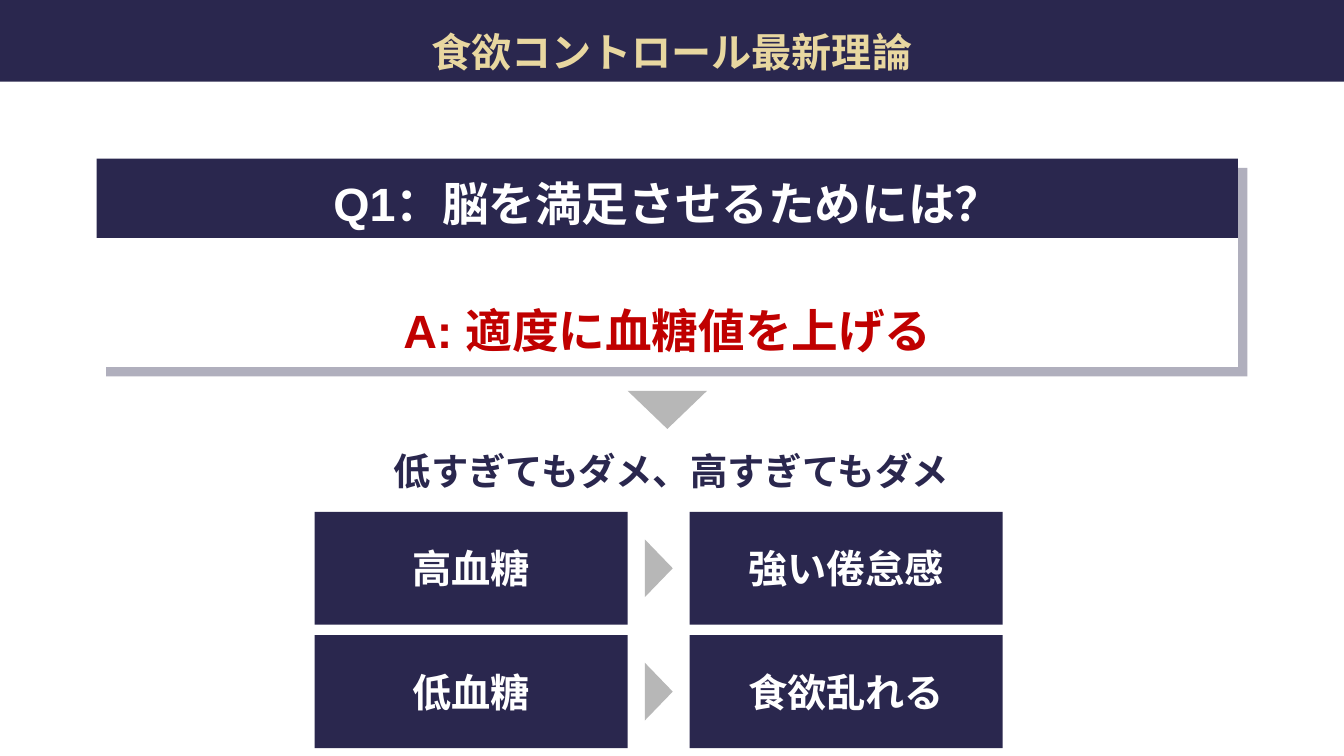
from lxml.etree import SubElement
from pptx import Presentation
from pptx.dml.color import RGBColor
from pptx.enum.shapes import MSO_SHAPE as Shape
from pptx.enum.text import MSO_ANCHOR as Anchor, PP_ALIGN as Align
from pptx.oxml.ns import qn
from pptx.util import Pt

COLORS = {
    "navy": "2A274E",
    "gold": "E8D7A0",
    "white": "FFFFFF",
    "red": "C00000",
    "gray": "B7B7B7",
}
FONT = "Arial"
INSET = 7.2


def add_block(slide, box, color, kind=Shape.RECTANGLE, rotation=0, alpha=None):
    shape = slide.shapes.add_shape(kind, *map(Pt, box))
    shape.shadow.inherit = False
    shape.fill.solid()
    shape.fill.fore_color.rgb = RGBColor.from_string(COLORS[color])
    shape.line.fill.background()
    shape.rotation = rotation
    if alpha is not None:
        fill_color = shape.fill._xPr.find(qn("a:solidFill"))[0]
        SubElement(fill_color, qn("a:alpha"), val=str(alpha * 1000))
    return shape


def add_textbox(slide, box):
    return slide.shapes.add_textbox(*map(Pt, box))


def set_text(shape, text, size, color, spacing=None, anchor=Anchor.MIDDLE):
    frame = shape.text_frame
    frame.text = text
    frame.word_wrap = True
    frame.vertical_anchor = anchor
    frame.margin_left = frame.margin_right = Pt(INSET)
    frame.margin_top = frame.margin_bottom = Pt(INSET)
    paragraph = frame.paragraphs[0]
    paragraph.alignment = Align.CENTER
    paragraph.line_spacing = spacing
    font = paragraph.runs[0].font
    font.name, font.size, font.bold = FONT, Pt(size), True
    font.color.rgb = RGBColor.from_string(COLORS[color])


def add_arrow(slide, center_x, center_y, base, height, rotation):
    box = (center_x - base / 2, center_y - height / 2, base, height)
    add_block(slide, box, "gray", Shape.ISOSCELES_TRIANGLE, rotation)


def add_title_bar(slide, box):
    bar = add_block(slide, box, "navy")
    set_text(bar, "食欲コントロール最新理論", 21.5, "gold", 1.3, Anchor.TOP)


def add_question_card(slide, box, question, answer):
    left, top, width, height = box
    offset, header_height, answer_top = 5, 42.5, 54.5
    # Translucent offset panel behind the card
    add_block(slide, (left + offset, top + offset, width, height), "navy", alpha=37)
    add_block(slide, box, "white")
    # Question and answer
    header = add_block(slide, (left, top, width, header_height), "navy")
    set_text(header, question, 25, "white", 1.15)
    answer_box = add_textbox(slide, (left, top + answer_top, width, 59.8))
    set_text(answer_box, answer, 25, "red", 1.5, Anchor.TOP)


def add_effect_grid(slide, box, rows):
    left, top, width, height = box
    column_gap, row_gap = 33.2, 5.6
    tile_width = (width - column_gap) / 2
    tile_height = (height - row_gap * (len(rows) - 1)) / len(rows)
    for row, labels in enumerate(rows):
        y = top + row * (tile_height + row_gap)
        for column, label in enumerate(labels):
            x = left + column * (tile_width + column_gap)
            tile = add_block(slide, (x, y, tile_width, tile_height), "navy")
            set_text(tile, label, 21, "white")
        add_arrow(slide, left + width / 2, y + tile_height / 2, 31, 15, 90)


def main():
    presentation = Presentation()
    presentation.slide_width, presentation.slide_height = Pt(720), Pt(405)
    slide = presentation.slides.add_slide(presentation.slide_layouts[6])

    add_question_card(slide, (51.8, 85, 611.4, 111.6),
                      "Q1：脳を満足させるためには？", "A: 適度に血糖値を上げる")
    add_arrow(slide, 357.5, 219.6, 42.5, 20.4, 180)

    # Message above the grid
    message = add_textbox(slide, (51.2, 234, 617, 36.7))
    set_text(message, "低すぎてもダメ、高すぎてもダメ", 20, "navy")
    add_effect_grid(slide, (168.6, 274.2, 368.6, 126.6),
                    [("高血糖", "強い倦怠感"), ("低血糖", "食欲乱れる")])

    add_title_bar(slide, (0, 0, 720, 43.8))
    presentation.save("out.pptx")


if __name__ == "__main__":
    main()
